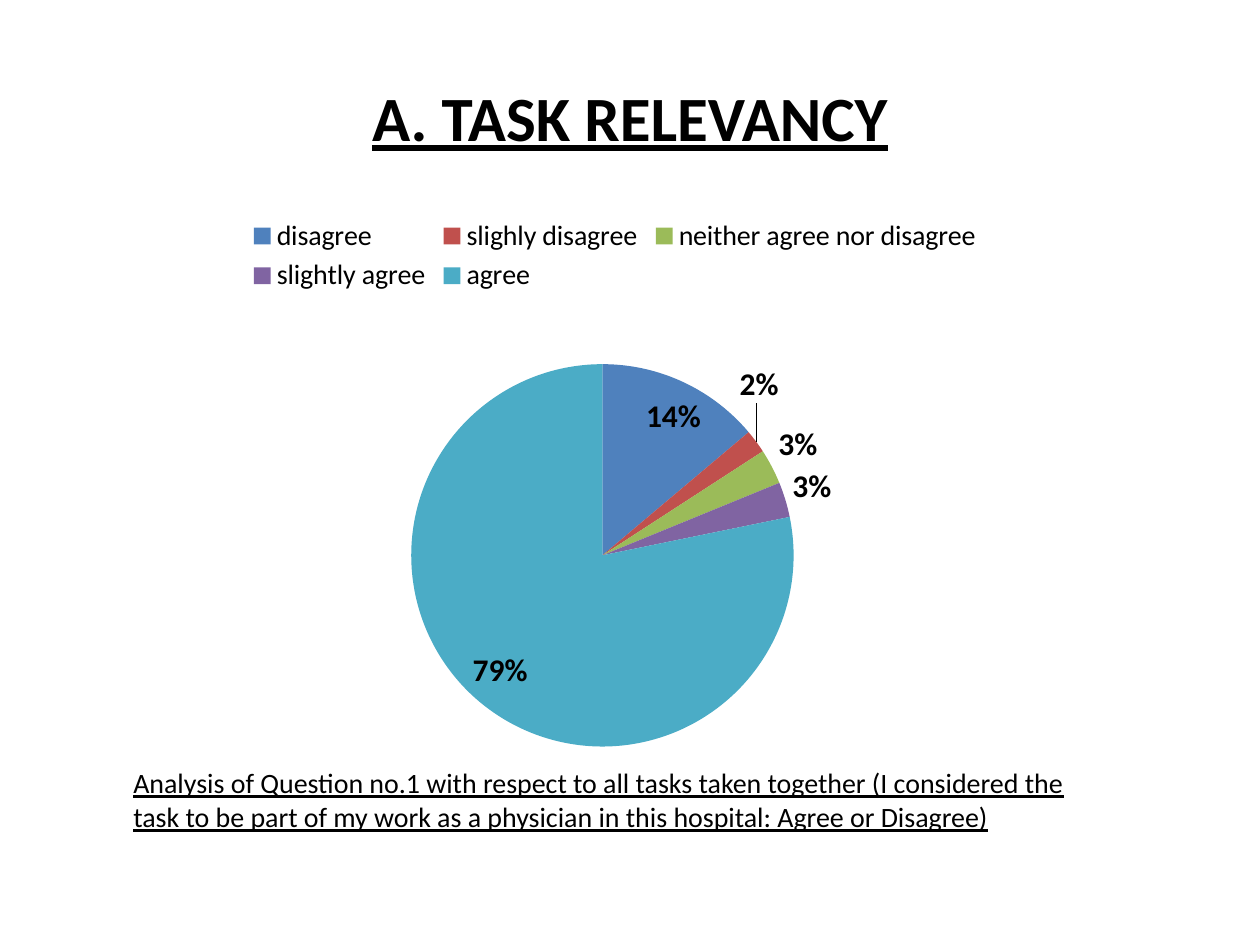
from copy import deepcopy
from dataclasses import dataclass

from lxml import etree
from pptx import Presentation
from pptx.chart.data import CategoryChartData
from pptx.dml.color import RGBColor
from pptx.enum.chart import XL_CHART_TYPE, XL_LABEL_POSITION, XL_LEGEND_POSITION
from pptx.enum.text import MSO_ANCHOR, PP_ALIGN
from pptx.oxml.ns import qn
from pptx.util import Inches, Pt


@dataclass(frozen=True)
class Theme:
    font: str = "Calibri"
    ink: str = "000000"
    title_size: int = 36
    body_size: int = 16
    label_size: int = 18
    chart_size: int = 10


ANSWERS = [
    ("disagree", 14, "4F81BD"),
    ("slighly disagree", 2, "C0504D"),
    ("neither agree nor disagree", 3, "9BBB59"),
    ("slightly agree", 3, "8064A2"),
    ("agree", 79, "4BACC6"),
]
PIE_AREA = {"x": 0.075, "y": 0.283, "w": 0.828, "h": 0.676}
SLIGHLY_DISAGREE = 1
LABEL_SHIFT = {"x": -0.02, "y": -0.06}


def manual_layout(fractions, modes):
    layout = etree.Element(qn("c:layout"))
    manual = etree.SubElement(layout, qn("c:manualLayout"))
    for tag, value in {**modes, **fractions}.items():
        etree.SubElement(manual, qn(f"c:{tag}")).set("val", str(value))
    return layout


class SlideBuilder:
    def __init__(self, slide, theme):
        self.slide = slide
        self.theme = theme

    def style(self, font, size, **extras):
        values = {"name": self.theme.font, "size": Pt(size), **extras}
        for attribute, value in values.items():
            setattr(font, attribute, value)
        font.color.rgb = RGBColor.from_string(self.theme.ink)

    def place(self, shape, left, top, width, height):
        box = {"left": left, "top": top, "width": width, "height": height}
        for attribute, value in box.items():
            setattr(shape, attribute, Inches(value))

    def title(self, wording, *box):
        heading = self.slide.shapes.title
        self.place(heading, *box)
        frame = heading.text_frame
        frame.vertical_anchor = MSO_ANCHOR.MIDDLE
        line = frame.paragraphs[0]
        line.alignment = PP_ALIGN.CENTER
        run = line.add_run()
        run.text = wording
        self.style(run.font, self.theme.title_size, bold=True, underline=True)

    def caption(self, wording, *box):
        note = self.slide.shapes.add_textbox(*map(Inches, box))
        note.text_frame.word_wrap = True
        run = note.text_frame.paragraphs[0].add_run()
        run.text = wording
        self.style(run.font, self.theme.body_size, underline=True)

    def pie(self, answers, *box):
        names, shares, colors = zip(*answers)
        data = CategoryChartData()
        data.categories = names
        data.add_series("Series 1", shares)
        chart = self.slide.shapes.add_chart(
            XL_CHART_TYPE.PIE, *map(Inches, box), data
        ).chart
        self.style(chart.font, self.theme.chart_size)
        chart.has_title = False
        chart.has_legend = True
        chart.legend.position = XL_LEGEND_POSITION.TOP
        chart.legend.include_in_layout = False
        self.style(chart.legend.font, self.theme.body_size)

        plot = chart.plots[0]
        plot.vary_by_categories = True
        responses = plot.series[0]
        for index, color in enumerate(colors):
            fill = responses.points[index].format.fill
            fill.solid()
            fill.fore_color.rgb = RGBColor.from_string(color)
        self.share_labels(responses)
        self.set_pie_area(chart)

    def share_labels(self, responses):
        """Label each slice, lifting the thinnest slice's label clear of its neighbours."""
        labels = responses.data_labels
        settings = {
            "show_value": True,
            "number_format": '0"%"',
            "number_format_is_linked": False,
            "position": XL_LABEL_POSITION.BEST_FIT,
        }
        for attribute, value in settings.items():
            setattr(labels, attribute, value)
        self.style(labels.font, self.theme.label_size, bold=True)

        lifted = responses.points[SLIGHLY_DISAGREE].data_label
        self.style(lifted.font, self.theme.label_size, bold=True)
        lifted.position = XL_LABEL_POSITION.BEST_FIT
        group = labels._element
        label = group.find(qn("c:dLbl"))
        for old in label.findall(qn("c:layout")):
            label.remove(old)
        label.insert(1, manual_layout(LABEL_SHIFT, {}))
        label.insert(2, deepcopy(group.find(qn("c:numFmt"))))

    def set_pie_area(self, chart):
        area = chart._chartSpace.find(f".//{qn('c:plotArea')}")
        for old in area.findall(qn("c:layout")):
            area.remove(old)
        modes = {"layoutTarget": "inner", "xMode": "edge", "yMode": "edge"}
        area.insert(0, manual_layout(PIE_AREA, modes))


def main():
    deck = Presentation()
    deck.slide_width, deck.slide_height = Inches(10), Inches(7.5)
    title_only = deck.slide_layouts[5]
    builder = SlideBuilder(deck.slides.add_slide(title_only), Theme())
    builder.title("A. TASK RELEVANCY", 0.5, 0.3, 9, 1.25)
    builder.pie(ANSWERS, 0.43, 1.62, 8.9, 4.49)
    builder.caption(
        "Analysis of Question no.1 with respect to all tasks taken together "
        "(I considered the task to be part of my work as a physician in this "
        "hospital: Agree or Disagree)",
        0.96, 6.03, 7.95, 0.94,
    )
    deck.save("out.pptx")


if __name__ == "__main__":
    main()
